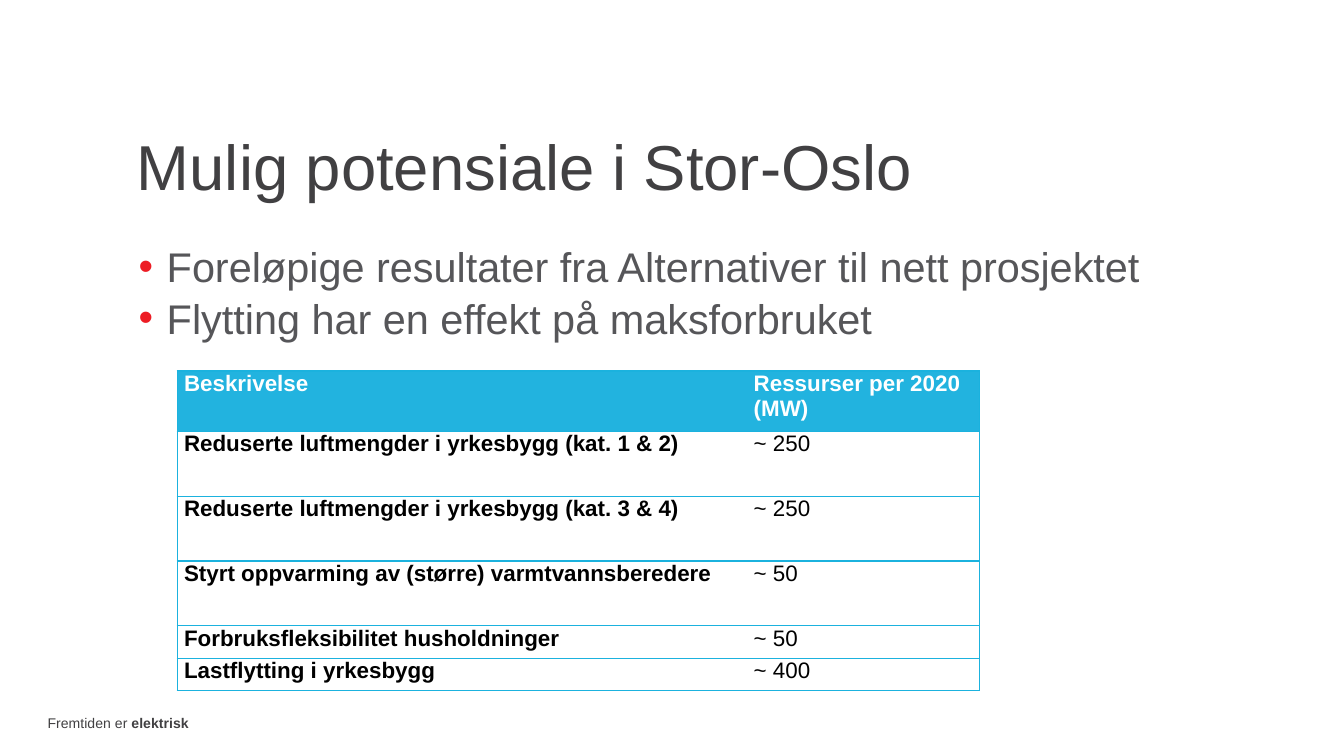
from lxml import etree
from pptx import Presentation
from pptx.dml import color
from pptx.enum import text
from pptx.oxml import ns
from pptx.util import Pt

FONT = "Arial"
BLUE = "1BB2DE"
DARK = "414042"
ROWS = [
    ("Beskrivelse", "Ressurser per 2020 (MW)"),
    ("Reduserte luftmengder i yrkesbygg (kat. 1 & 2)", "~ 250"),
    ("Reduserte luftmengder i yrkesbygg (kat. 3 & 4)", "~ 250"),
    ("Styrt oppvarming av (større) varmtvannsberedere", "~ 50"),
    ("Forbruksfleksibilitet husholdninger", "~ 50"),
    ("Lastflytting i yrkesbygg", "~ 400"),
]
COLUMN_WIDTHS = [305.2, 124.6]
ROW_HEIGHTS = [32.4, 34.7, 34.7, 34.7, 17.4, 17.4]
BULLETS = [
    "Foreløpige resultater fra Alternativer til nett prosjektet",
    "Flytting har en effekt på maksforbruket",
]


def rgb(value):
    return color.RGBColor.from_string(value)


def add_text(paragraph, content, size=12, fill=DARK, bold=False):
    run = paragraph.add_run()
    run.text = content
    run.font.name = FONT
    run.font.size = Pt(size)
    run.font.bold = bold
    run.font.color.rgb = rgb(fill)


def clear_insets(frame):
    frame.word_wrap = True
    frame.auto_size = text.MSO_AUTO_SIZE.NONE
    frame.margin_left = frame.margin_right = Pt(0)
    frame.margin_top = frame.margin_bottom = Pt(0)


def add_box(slide, left, top, width, height):
    shape = slide.shapes.add_textbox(Pt(left), Pt(top), Pt(width), Pt(height))
    clear_insets(shape.text_frame)
    return shape.text_frame


def add_title(slide, content):
    shape = slide.shapes.title
    shape.left, shape.top = Pt(73.4), Pt(67.7)
    shape.width, shape.height = Pt(489.6), Pt(41)
    frame = shape.text_frame
    clear_insets(frame)
    frame.vertical_anchor = text.MSO_ANCHOR.BOTTOM
    paragraph = frame.paragraphs[0]
    paragraph.alignment = text.PP_ALIGN.LEFT
    add_text(paragraph, content, size=34)


def add_bullet(paragraph):
    properties = paragraph._p.get_or_add_pPr()
    properties.set("marL", str(Pt(15.1)))
    properties.set("indent", str(-Pt(15.1)))
    bullet_color = etree.SubElement(properties, ns.qn("a:buClr"))
    etree.SubElement(bullet_color, ns.qn("a:srgbClr"), val="ED1C24")
    etree.SubElement(properties, ns.qn("a:buFont"), typeface=FONT)
    etree.SubElement(properties, ns.qn("a:buChar"), char="•")


def add_bullets(slide, lines):
    frame = add_box(slide, 74.2, 129.2, 575.3, 68.4)
    for index, line in enumerate(lines):
        paragraph = frame.add_paragraph() if index else frame.paragraphs[0]
        add_bullet(paragraph)
        paragraph.space_after = Pt(1)
        add_text(paragraph, line, size=22.2, fill="565659")


def set_borders(cell, visible):
    properties = cell._tc.get_or_add_tcPr()
    for index, side in enumerate("LRTB"):
        line = etree.Element(ns.qn("a:ln" + side), w=str(Pt(0.75)))
        if side in visible:
            fill = etree.SubElement(line, ns.qn("a:solidFill"))
            etree.SubElement(fill, ns.qn("a:srgbClr"), val=BLUE)
        else:
            etree.SubElement(line, ns.qn("a:noFill"))
        properties.insert(index, line)


def format_cell(cell, content, is_header, is_first):
    cell.margin_left = cell.margin_right = Pt(3.6)
    cell.margin_top = cell.margin_bottom = Pt(0)
    cell.fill.solid()
    cell.fill.fore_color.rgb = rgb("22B3DF" if is_header else "FFFFFF")
    set_borders(cell, "LTB" if is_first else "RTB")
    paragraph = cell.text_frame.paragraphs[0]
    paragraph.space_after = Pt(3)
    add_text(paragraph, content, fill="FFFFFF" if is_header else "000000",
             bold=is_header or is_first)


def add_resource_table(slide):
    table = slide.shapes.add_table(
        len(ROWS), len(COLUMN_WIDTHS), Pt(95), Pt(198.7),
        Pt(sum(COLUMN_WIDTHS)), Pt(sum(ROW_HEIGHTS))).table
    for column, width in zip(table.columns, COLUMN_WIDTHS):
        column.width = Pt(width)
    for row_index, (row, height) in enumerate(zip(table.rows, ROW_HEIGHTS)):
        row.height = Pt(height)
        for column_index, content in enumerate(ROWS[row_index]):
            format_cell(row.cells[column_index], content,
                        row_index == 0, column_index == 0)


def add_tagline(slide):
    paragraph = add_box(slide, 25.5, 382.5, 139.7, 13).paragraphs[0]
    add_text(paragraph, "Fremtiden er ", size=7.5)
    add_text(paragraph, "elektrisk", size=7.5, bold=True)


def main():
    presentation = Presentation()
    presentation.slide_width, presentation.slide_height = Pt(720), Pt(405)
    slide = presentation.slides.add_slide(presentation.slide_layouts[5])
    add_title(slide, "Mulig potensiale i Stor-Oslo")
    add_resource_table(slide)
    add_tagline(slide)
    add_bullets(slide, BULLETS)
    presentation.save("out.pptx")


if __name__ == "__main__":
    main()
